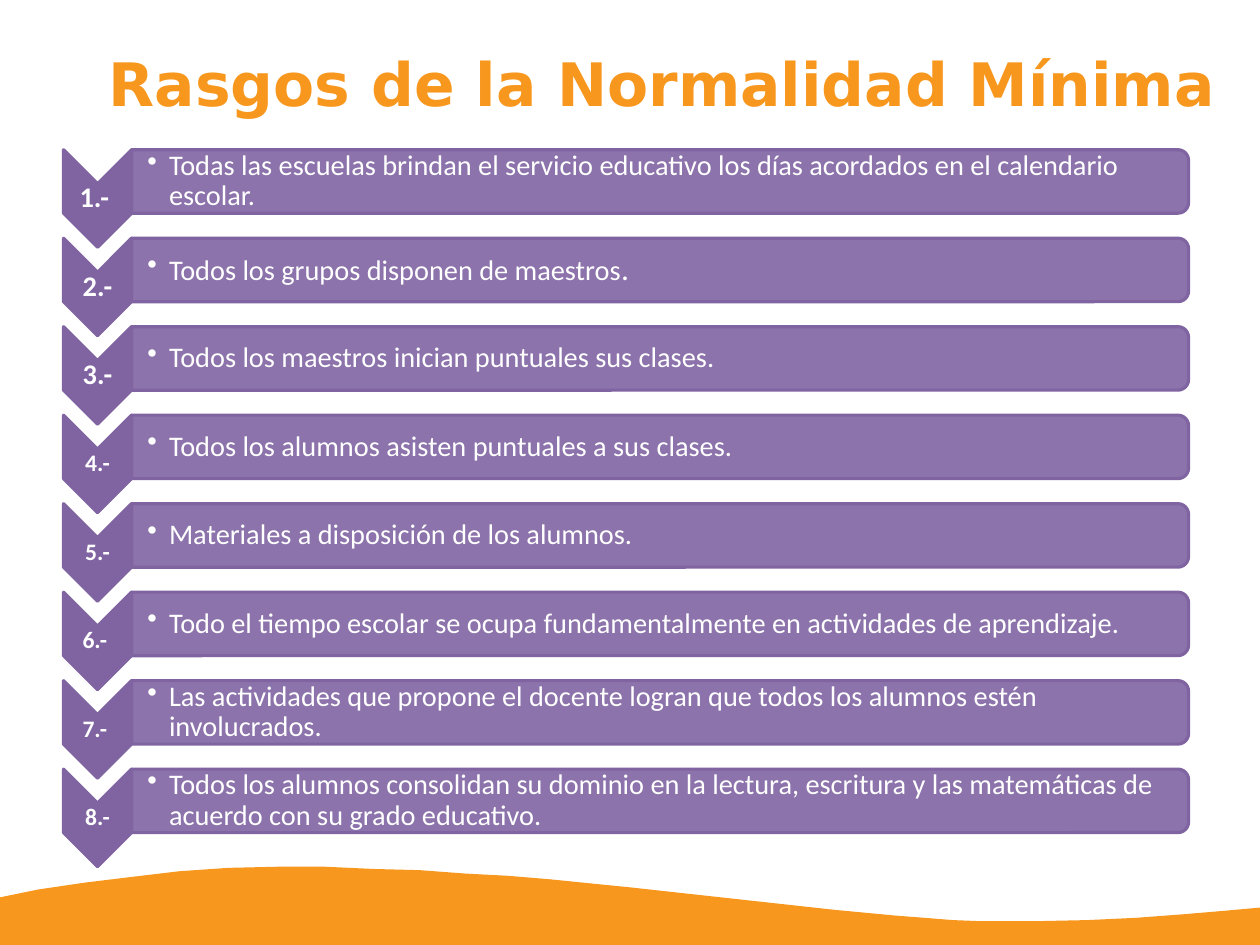
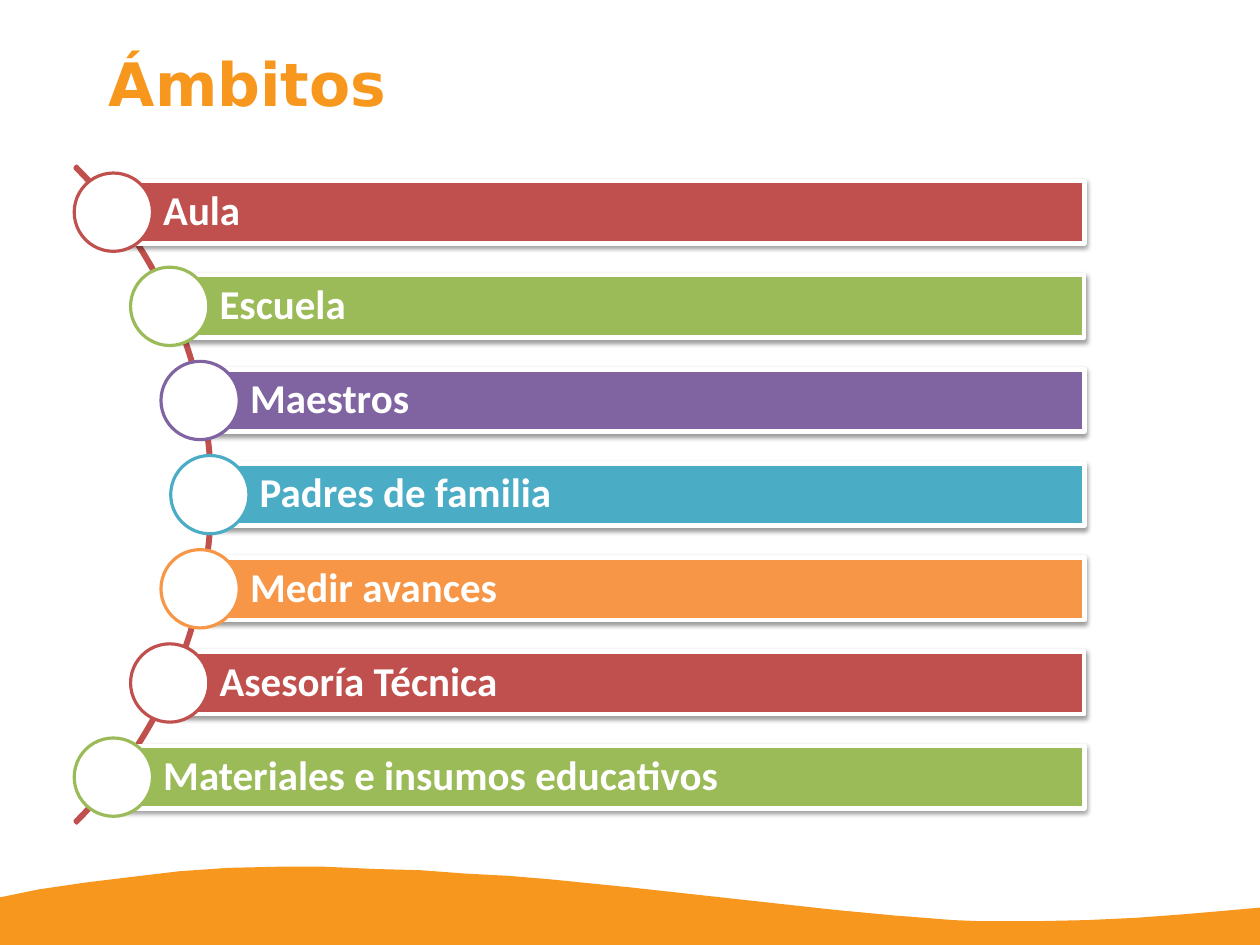
"""Build two slides on school normality: its eight traits and its seven areas."""
import math

from lxml import etree
from pptx import Presentation
from pptx.dml.color import RGBColor
from pptx.enum import shapes, text
from pptx.oxml.ns import qn
from pptx.util import Inches, Pt

ORANGE = RGBColor(0xF8, 0x97, 0x1D)
WHITE = RGBColor(0xFF, 0xFF, 0xFF)
RED = RGBColor(0xC0, 0x50, 0x4D)
GREEN = RGBColor(0x9B, 0xBB, 0x59)
PURPLE = RGBColor(0x80, 0x64, 0xA2)
BLUE = RGBColor(0x4B, 0xAC, 0xC6)
AMBER = RGBColor(0xF7, 0x96, 0x46)
SHAPE = shapes.MSO_SHAPE
LEFT, CENTER = text.PP_ALIGN.LEFT, text.PP_ALIGN.CENTER
TOP, MIDDLE = text.MSO_ANCHOR.TOP, text.MSO_ANCHOR.MIDDLE
WIDTH, HEIGHT = 11.11, 8.33

WAVE = [
    (0, 8.33), (0, 7.91), (0.34, 7.84), (0.75, 7.78), (1.16, 7.73), (1.58, 7.68),
    (2.01, 7.65), (2.44, 7.64), (2.87, 7.64), (3.3, 7.66), (3.7, 7.67), (4.1, 7.7),
    (4.48, 7.72), (4.84, 7.75), (5.54, 7.82), (7.36, 8.02), (7.89, 8.07), (8.15, 8.09),
    (8.4, 8.11), (8.65, 8.12), (8.89, 8.12), (9.13, 8.12), (9.59, 8.11), (10.02, 8.09),
    (10.42, 8.06), (10.78, 8.03), (11.11, 8), (11.11, 8.33),
]
TRAITS = [
    ("1.- ", 18, [("Todas las escuelas brindan el servicio educativo los días acordados en el calendario escolar.", 18)]),
    ("2.-", 18, [("Todos los grupos disponen de maestros", 18), (".", 20)]),
    ("3.-", 18, [("Todos los maestros inician puntuales sus clases.", 18)]),
    ("4.-", 15, [("Todos los alumnos asisten puntuales a sus clases.", 18)]),
    ("5.-", 15, [("Materiales a disposición de los alumnos.", 18)]),
    ("6.- ", 15, [("Todo el tiempo escolar se ocupa fundamentalmente en actividades de aprendizaje.", 18)]),
    ("7.- ", 15, [("Las actividades que propone el docente logran que todos los alumnos estén involucrados.", 18)]),
    ("8.-", 15, [("Todos los alumnos consolidan su dominio en la lectura, escritura y las matemáticas de acuerdo con su grado educativo.", 18)]),
]
AREAS = [
    ("Aula", RED), ("Escuela", GREEN), ("Maestros", PURPLE), ("Padres de familia", BLUE),
    ("Medir avances", AMBER), ("Asesoría Técnica", RED),
    ("Materiales e insumos educativos", GREEN),
]


def put_text(sp, runs, color=WHITE, font="Calibri", bold=False, align=LEFT, anchor=MIDDLE,
             insets=(0.01, 0.01, 0.01, 0.01), spacing=0.9, bullet=False):
    tf = sp.text_frame
    tf.word_wrap = True
    tf.auto_size = text.MSO_AUTO_SIZE.NONE
    tf.vertical_anchor = anchor
    tf.margin_left, tf.margin_top, tf.margin_right, tf.margin_bottom = map(Inches, insets)
    p = tf.paragraphs[0]
    p.alignment = align
    p.line_spacing = spacing
    if bullet:
        pPr = p._p.get_or_add_pPr()
        pPr.set("marL", str(Inches(0.19)))
        pPr.set("indent", str(-Inches(0.19)))
        etree.SubElement(pPr, qn("a:buChar")).set("char", "•")
    for words, size in runs:
        r = p.add_run()
        r.text = words
        r.font.name, r.font.size, r.font.bold = font, Pt(size), bold
        r.font.color.rgb = color


def add_shape(s, kind, left, top, width, height, fill=None, line=None, weight=2, rotation=0):
    sp = s.shapes.add_shape(kind, *map(Inches, (left, top, width, height)))
    sp.rotation = rotation
    sp.shadow.inherit = False
    if fill is None:
        sp.fill.background()
    else:
        sp.fill.solid()
        sp.fill.fore_color.rgb = fill
    sp.line.color.rgb = line
    sp.line.width = Pt(weight)
    return sp


def add_turned(s, kind, cx, cy, across, down, **style):
    return add_shape(s, kind, cx - down / 2, cy - across / 2, down, across, rotation=90, **style)


def set_opacity(sp, percent):
    color = sp.element.spPr.find(qn("a:solidFill"))[0]
    etree.SubElement(color, qn("a:alpha")).set("val", str(percent * 1000))


def drop_shadow(sp):
    effects = sp.element.spPr.find(qn("a:effectLst"))
    shadow = etree.SubElement(effects, qn("a:outerShdw"), blurRad=str(Pt(3.1)),
                              dist=str(Pt(1.6)), dir="5400000", rotWithShape="0")
    color = etree.SubElement(shadow, qn("a:srgbClr"), val="000000")
    etree.SubElement(color, qn("a:alpha"), val="38000")


def add_slide(prs, title):
    s = prs.slides.add_slide(prs.slide_layouts[5])
    sp = s.shapes.title
    sp.left, sp.top, sp.width, sp.height = map(Inches, (0.96, 0.43, 9.93, 0.88))
    put_text(sp, [(title, 38)], color=ORANGE, font="DejaVu Sans", bold=True, anchor=TOP,
             insets=(0, 0, 0, 0), spacing=Pt(44.1))
    return s


def add_wave(s):
    points = [(Inches(x), Inches(y)) for x, y in WAVE]
    builder = s.shapes.build_freeform(*points[0])
    builder.add_line_segments(points[1:], close=True)
    sp = builder.convert_to_shape()
    sp.shadow.inherit = False
    sp.fill.solid()
    sp.fill.fore_color.rgb = ORANGE
    sp.line.fill.background()
    s.slide_layout.shapes.element.insert(2, sp.element)


def add_traits(s):
    pitch, first = 0.78, 1.6
    for i, (number, size, runs) in enumerate(TRAITS):
        cy = first + i * pitch
        add_turned(s, SHAPE.CHEVRON, 0.86, cy + 0.15, 0.6, 0.86, fill=PURPLE, line=PURPLE)
        label = s.shapes.add_textbox(*map(Inches, (0.56, cy + 0.02, 0.6, 0.26)))
        put_text(label, [(number, size)], bold=True, align=CENTER)
        bar = add_turned(s, SHAPE.ROUND_2_SAME_RECTANGLE, 5.82, cy, 9.32, 0.56,
                         fill=PURPLE, line=PURPLE)
        set_opacity(bar, 90)
        box = s.shapes.add_textbox(*map(Inches, (1.16, cy - 0.25, 9.29, 0.5)))
        put_text(box, runs, insets=(0.14, 0.01, 0.01, 0.01), bullet=True)


def add_areas(s):
    cx, cy, size, radius = -2.22, 4.36, 8.19, 4.07
    pitch, right, bar_height, dot = 0.83, 9.56, 0.55, 0.69
    arc = add_shape(s, SHAPE.BLOCK_ARC, cx - size / 2, cy - size / 2, size, size, line=RED)
    for i, value in enumerate((189, 27, 0.003)):
        arc.adjustments[i] = value
    for i, (name, color) in enumerate(AREAS):
        dy = (i - len(AREAS) // 2) * pitch
        x, y = cx + math.sqrt(radius ** 2 - dy ** 2), cy + dy
        bar = add_shape(s, SHAPE.RECTANGLE, x, y - bar_height / 2, right - x, bar_height,
                        fill=color, line=WHITE, weight=3)
        drop_shadow(bar)
        put_text(bar, [(name, 26)], bold=True, insets=(0.44, 0.07, 0.07, 0.07))
        add_shape(s, SHAPE.OVAL, x - dot / 2, y - dot / 2, dot, dot, fill=WHITE, line=color)


def main():
    prs = Presentation()
    prs.slide_width, prs.slide_height = Inches(WIDTH), Inches(HEIGHT)
    traits = add_slide(prs, "Rasgos de la Normalidad Mínima")
    add_wave(traits)
    add_traits(traits)
    add_areas(add_slide(prs, "Ámbitos"))
    prs.save("out.pptx")


if __name__ == "__main__":
    main()
